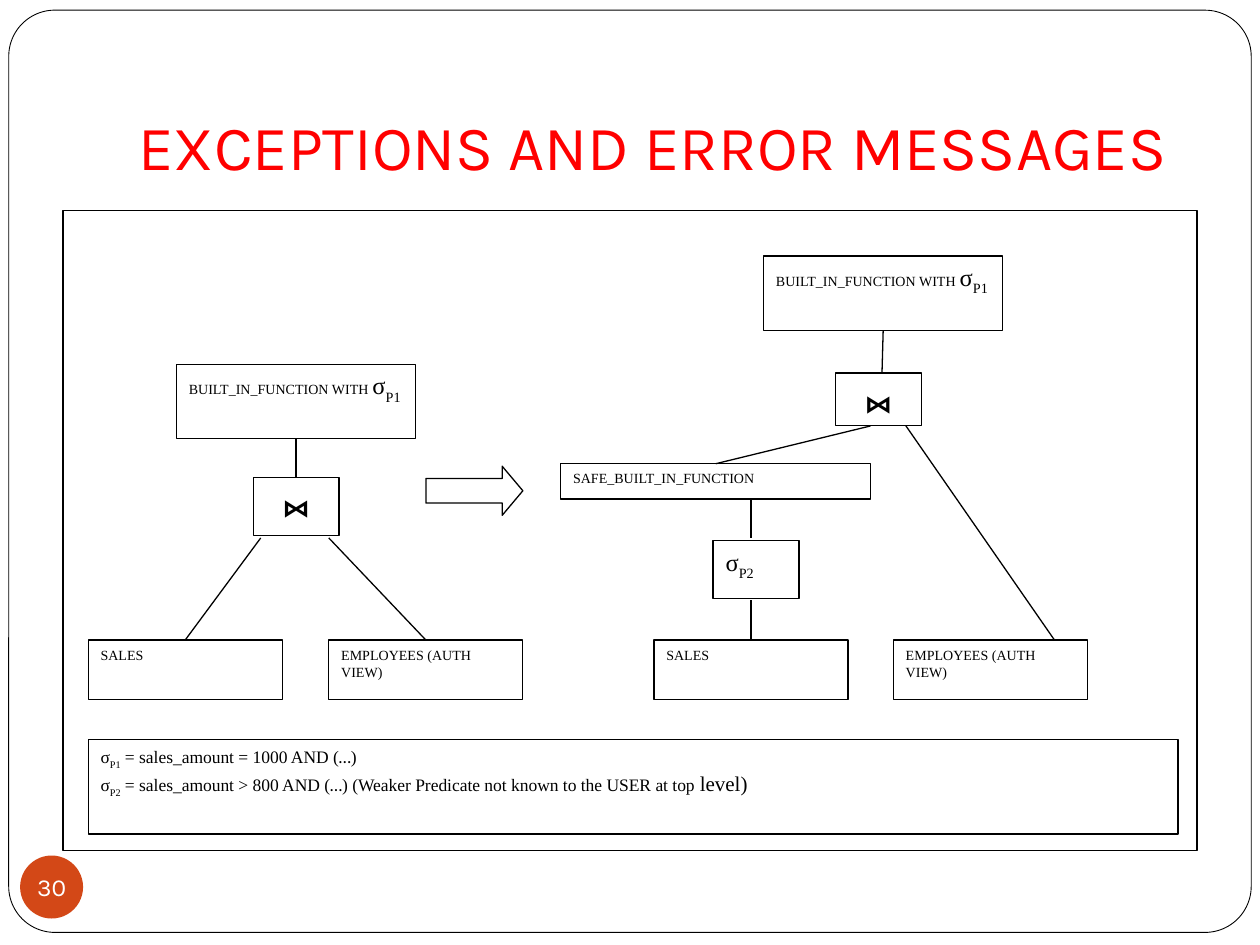
from pptx import Presentation
from pptx.dml.color import RGBColor
from pptx.enum.shapes import MSO_CONNECTOR, MSO_SHAPE
from pptx.enum.text import MSO_ANCHOR, PP_ALIGN
from pptx.oxml.ns import qn
from pptx.util import Pt
from lxml.etree import SubElement

BLACK = RGBColor(0, 0, 0)
WHITE = RGBColor(255, 255, 255)
RED = RGBColor(255, 0, 0)
ORANGE = RGBColor(0xD3, 0x48, 0x17)
SERIF = "Times New Roman"
SANS = "Karla"
LEAF_TOP = 365.8
LEAF_SIZE = (110.9, 33.8)
JOIN_WIDTH = 49


def add_run(para, text, size, font=SERIF, color=BLACK, bold=False, sub=False):
    run = para.add_run()
    run.text = text
    run.font.size = Pt(size)
    run.font.name = font
    run.font.color.rgb = color
    run.font.bold = bold
    if sub:
        run._r.get_or_add_rPr().set("baseline", "-30000")


def add_sigma(para, label, size):
    add_run(para, "σ", size)
    add_run(para, label, size, sub=True)


def add_box(slide, x, y, w, h, kind=MSO_SHAPE.RECTANGLE, width=0.75):
    box = slide.shapes.add_shape(kind, Pt(x), Pt(y), Pt(w), Pt(h))
    box.shadow.inherit = False
    box.fill.solid()
    box.fill.fore_color.rgb = WHITE
    box.line.color.rgb = BLACK
    box.line.width = Pt(width)
    frame = box.text_frame
    frame.word_wrap = True
    frame.vertical_anchor = MSO_ANCHOR.TOP
    frame.paragraphs[0].alignment = PP_ALIGN.LEFT
    return box


def add_label(slide, text, x, y, w, h):
    para = add_box(slide, x, y, w, h).text_frame.paragraphs[0]
    add_run(para, text, 8)
    return para


def add_join(slide, x, y, h):
    para = add_box(slide, x, y, JOIN_WIDTH, h).text_frame.paragraphs[0]
    para.alignment = PP_ALIGN.CENTER
    add_run(para, "⋈", 20, bold=True)


def add_root(slide, x, y):
    para = add_label(slide, "BUILT_IN_FUNCTION WITH ", x, y, 136.8, 42.5)
    add_sigma(para, "P1", 14)


def add_edge(slide, x1, y1, x2, y2):
    edge = slide.shapes.add_connector(
        MSO_CONNECTOR.STRAIGHT, Pt(x1), Pt(y1), Pt(x2), Pt(y2))
    edge.line.color.rgb = BLACK
    edge.line.width = Pt(0.75)
    SubElement(edge._element.spPr, qn("a:effectLst"))


def add_title(slide, text):
    frame = slide.shapes.add_textbox(Pt(72), Pt(21.6), Pt(612), Pt(90)).text_frame
    frame.word_wrap = True
    frame.vertical_anchor = MSO_ANCHOR.BOTTOM
    frame.margin_bottom = Pt(7.2)
    add_run(frame.paragraphs[0], text, 36, SANS, RED)


def add_number(slide, text):
    badge = add_box(slide, 11.5, 488.9, 36, 36, MSO_SHAPE.OVAL)
    badge.fill.fore_color.rgb = ORANGE
    badge.line.fill.background()
    frame = badge.text_frame
    frame.word_wrap = False
    frame.vertical_anchor = MSO_ANCHOR.MIDDLE
    frame.margin_left = frame.margin_right = 0
    frame.margin_top = frame.margin_bottom = 0
    frame.paragraphs[0].alignment = PP_ALIGN.CENTER
    add_run(frame.paragraphs[0], text, 14, SANS, WHITE)


def add_rule(para, label, test):
    para.alignment = PP_ALIGN.LEFT
    add_sigma(para, label, 10)
    add_run(para, f" = sales_amount {test} AND (", 10)
    add_run(para, "…", 10, "Calibri")


def add_legend(slide):
    frame = add_box(slide, 50.4, 422.6, 622.8, 54).text_frame
    first = frame.paragraphs[0]
    add_rule(first, "P1", "= 1000")
    add_run(first, ")", 10)
    second = frame.add_paragraph()
    add_rule(second, "P2", "> 800")
    add_run(second, ") (Weaker Predicate not known to the USER at top", 10)
    add_run(second, " level)", 12)


def add_leaves(slide, left, right):
    add_label(slide, "SALES", left, LEAF_TOP, *LEAF_SIZE)
    add_label(slide, "EMPLOYEES (AUTH VIEW)", right, LEAF_TOP, *LEAF_SIZE)


def add_before(slide):
    add_leaves(slide, 50.4, 187.9)
    add_join(slide, 144.7, 272.9, 33.1)
    add_root(slide, 100.8, 208.1)
    add_edge(slide, 105.8, LEAF_TOP, 149, 307.4)
    add_edge(slide, 187.9, 307.4, 243.4, LEAF_TOP)
    add_edge(slide, 169.2, 272.9, 169.2, 250.6)


def add_after(slide):
    add_leaves(slide, 373.7, 510.5)
    sigma = add_box(slide, 407.5, 308.9, JOIN_WIDTH, 33.1)
    add_sigma(sigma.text_frame.paragraphs[0], "P2", 14)
    add_join(slide, 477.4, 213.1, 30.2)
    add_label(slide, "SAFE_BUILT_IN_FUNCTION", 320.4, 265, 177.1, 20.2)
    add_root(slide, 436.3, 146.2)
    add_edge(slide, 429.1, LEAF_TOP, 429.1, 342.7)
    add_edge(slide, 429.1, 307.4, 429.1, 285.1)
    add_edge(slide, 409, 265, 497.5, 243.4)
    add_edge(slide, 517.7, 243.4, 602.6, LEAF_TOP)
    add_edge(slide, 504, 213.1, 504.7, 188.6)


def main():
    deck = Presentation()
    deck.slide_width, deck.slide_height = Pt(720), Pt(540)
    slide = deck.slides.add_slide(deck.slide_layouts[6])
    border = add_box(slide, 5, 5.8, 710, 527, MSO_SHAPE.ROUNDED_RECTANGLE, 0.5)
    border.adjustments[0] = 0.05
    add_title(slide, "EXCEPTIONS AND ERROR MESSAGES")
    add_number(slide, "30")
    add_box(slide, 36, 120.2, 648, 365.8)
    add_before(slide)
    arrow = add_box(slide, 243.4, 266.4, 55.4, 28.1, MSO_SHAPE.RIGHT_ARROW)
    arrow.adjustments[1] = 0.42
    add_after(slide)
    add_legend(slide)
    deck.save("out.pptx")


if __name__ == "__main__":
    main()
